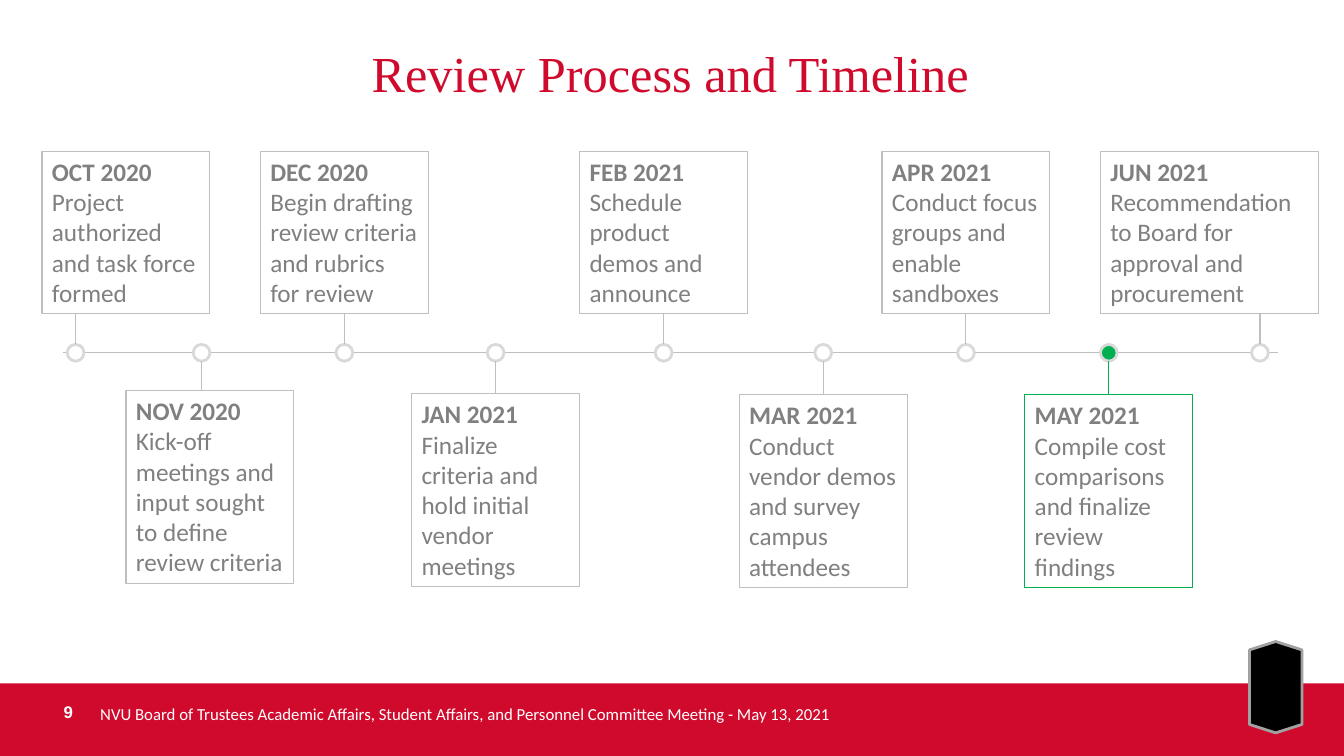
from dataclasses import dataclass

from lxml.etree import SubElement
from pptx import Presentation
from pptx.dml.color import RGBColor
from pptx.enum.shapes import MSO_CONNECTOR, MSO_SHAPE
from pptx.enum.text import MSO_ANCHOR, PP_ALIGN
from pptx.oxml.ns import qn
from pptx.util import Emu, Pt


@dataclass(frozen=True)
class Theme:
    """Colours, fonts and sizes of the slide."""
    red: str = "D00A2C"
    green: str = "00B050"
    white: str = "FFFFFF"
    black: str = "000000"
    text: str = "808080"
    rule: str = "BFBFBF"
    ring: str = "D9D9D9"
    emblem_edge: str = "A1A1A1"
    title_font: str = "Times New Roman"
    body_font: str = "Calibri"
    number_font: str = "Arial"
    title_size: int = 36
    body_size: int = 18
    footer_size: int = 12
    thin: float = 0.75
    thick: float = 2


THEME = Theme()
EMU_PER_PX = 9525
SLIDE_WIDTH, SLIDE_HEIGHT = 1280, 720
AXIS_Y, DOT, CARD_WIDTH = 336, 16, 160
UPPER_TOP, UPPER_HEIGHT, LOWER_HEIGHT = 144, 155, 184

MILESTONES = [
    (72, 40, UPPER_TOP, CARD_WIDTH, "OCT 2020", "Project authorized and task force formed"),
    (192, 120, 372, CARD_WIDTH, "NOV 2020", "Kick-off meetings and input sought to define review criteria"),
    (328, 248, UPPER_TOP, CARD_WIDTH, "DEC 2020", "Begin drafting review criteria and rubrics for review"),
    (472, 392, 375, CARD_WIDTH, "JAN 2021", "Finalize criteria and hold initial vendor meetings"),
    (632, 552, UPPER_TOP, CARD_WIDTH, "FEB 2021", "Schedule product demos and announce"),
    (784, 704, 376, CARD_WIDTH, "MAR 2021", "Conduct vendor demos and survey campus attendees"),
    (920, 840, UPPER_TOP, CARD_WIDTH, "APR 2021", "Conduct focus groups and enable sandboxes"),
    (1056, 976, 376, CARD_WIDTH, "MAY 2021", "Compile cost comparisons and finalize review findings"),
    (1200, 1048, UPPER_TOP, 208, "JUN 2021", "Recommendation to Board for approval and procurement"),
]
CURRENT = "MAY 2021"


def px(*lengths):
    """Turn pixel lengths into EMU."""
    return [Emu(length * EMU_PER_PX) for length in lengths]


def paint(shape, fill=None, line=None, weight=THEME.thin):
    """Set the fill and outline of a shape, without a shadow."""
    shape.shadow.inherit = False
    if fill:
        shape.fill.solid()
        shape.fill.fore_color.rgb = RGBColor.from_string(fill)
    else:
        shape.fill.background()
    if line:
        shape.line.color.rgb = RGBColor.from_string(line)
        shape.line.width = Pt(weight)
    else:
        shape.line.fill.background()


def write(shape, text, font, size, color, align=PP_ALIGN.LEFT, anchor=MSO_ANCHOR.TOP):
    """Write one paragraph in a shape and return its runs."""
    frame = shape.text_frame
    frame.word_wrap = True
    frame.vertical_anchor = anchor
    para = frame.paragraphs[0]
    para.text = text
    para.alignment = align
    for span in para.runs:
        span.font.name = font
        span.font.size = Pt(size)
        span.font.color.rgb = RGBColor.from_string(color)
    return para.runs


def add_line(page, start, end, color):
    """Draw a thin straight connector between two points."""
    line = page.shapes.add_connector(MSO_CONNECTOR.STRAIGHT, *px(*start, *end))
    line.line.color.rgb = RGBColor.from_string(color)
    line.line.width = Pt(THEME.thin)
    SubElement(line._element.spPr, qn("a:effectLst"))
    return line


def add_title(page):
    """Add the slide title."""
    box = page.shapes.add_textbox(*px(60, 40, 1157, 59))
    frame = box.text_frame
    frame.margin_left = frame.margin_right = frame.margin_top = frame.margin_bottom = 0
    write(box, "Review Process and Timeline", THEME.title_font, THEME.title_size,
          THEME.red, PP_ALIGN.CENTER)


def add_footer(page):
    """Add the red band with the emblem, page number and meeting name."""
    top = 651
    band = page.shapes.add_shape(
        MSO_SHAPE.RECTANGLE, *px(0, top, SLIDE_WIDTH, SLIDE_HEIGHT - top))
    paint(band, THEME.red)
    outline = page.shapes.build_freeform(1240, 619, scale=EMU_PER_PX)
    outline.add_line_segments([(1215, 611), (1190, 619), (1190, 690), (1215, 698), (1240, 690)])
    paint(outline.convert_to_shape(), THEME.black, THEME.emblem_edge, THEME.thick)
    number = page.shapes.add_textbox(*px(40, 664, 39, 30))
    for span in write(number, "9", THEME.number_font, THEME.footer_size, THEME.white,
                      PP_ALIGN.RIGHT):
        span.font.bold = True
    meeting = page.shapes.add_textbox(*px(86, 664, 918, 32))
    write(meeting, "NVU Board of Trustees Academic Affairs, Student Affairs, and "
          "Personnel Committee Meeting - May 13, 2021", THEME.body_font,
          THEME.footer_size, THEME.white, anchor=MSO_ANCHOR.MIDDLE)


def add_milestone(page, center, left, top, width, month, task):
    """Add a dot on the axis, its card and the stem between them."""
    current = month == CURRENT
    accent = THEME.green if current else THEME.rule
    upper = top < AXIS_Y
    height = UPPER_HEIGHT if upper else LOWER_HEIGHT
    dot = page.shapes.add_shape(
        MSO_SHAPE.OVAL, *px(center - DOT // 2, AXIS_Y - DOT // 2, DOT, DOT))
    paint(dot, THEME.green if current else THEME.white, THEME.ring, THEME.thick)
    card = page.shapes.add_shape(MSO_SHAPE.RECTANGLE, *px(left, top, width, height))
    paint(card, line=accent)
    heading, *_ = write(card, f"{month}\v{task}", THEME.body_font, THEME.body_size, THEME.text)
    heading.font.bold = True
    dot_edge = AXIS_Y - DOT // 2 if upper else AXIS_Y + DOT // 2
    card_edge = top + height if upper else top
    stem = add_line(page, (center, dot_edge), (center, card_edge), accent)
    if center == left + width // 2:
        stem.end_connect(card, 2 if upper else 0)


def main():
    """Build the timeline slide and save it."""
    deck = Presentation()
    deck.slide_width, deck.slide_height = px(SLIDE_WIDTH, SLIDE_HEIGHT)
    page = deck.slides.add_slide(deck.slide_layouts[6])
    add_footer(page)
    add_title(page)
    add_line(page, (60, AXIS_Y), (1217, AXIS_Y), THEME.rule)
    for milestone in MILESTONES:
        add_milestone(page, *milestone)
    deck.save("out.pptx")


if __name__ == "__main__":
    main()
